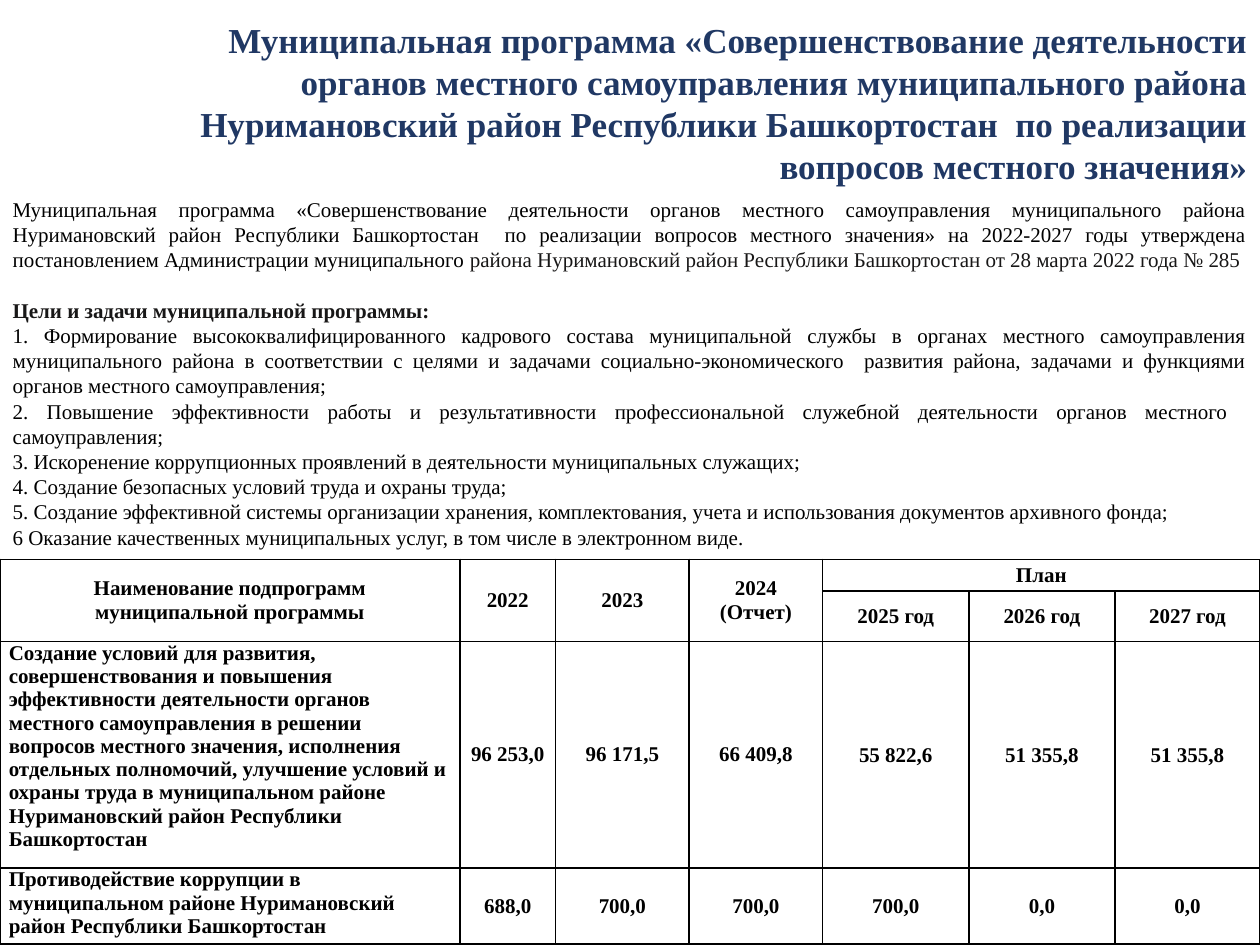
from lxml.etree import SubElement
from pptx import Presentation
from pptx.dml.color import RGBColor
from pptx.enum.text import MSO_ANCHOR as Anchor, MSO_AUTO_SIZE as AutoSize, PP_ALIGN as Align
from pptx.oxml.ns import qn
from pptx.util import Inches, Pt

COLORS = {"title": "203864", "text": "000000", "soft": "181717", "border": "000000"}
FONT = "Times New Roman"


def add_span(para, text, size=12, bold=False, color="text"):
    span = para.add_run()
    span.text = text
    span.font.name = FONT
    span.font.size = Pt(size)
    span.font.bold = bold
    span.font.color.rgb = RGBColor.from_string(COLORS[color])


def add_borders(cell):
    properties = cell._tc.get_or_add_tcPr()
    for side in ("lnL", "lnR", "lnT", "lnB"):
        line = SubElement(properties, qn(f"a:{side}"), w=str(Pt(1)))
        fill = SubElement(line, qn("a:solidFill"))
        SubElement(fill, qn("a:srgbClr"), val=COLORS["border"])


deck = Presentation()
deck.slide_width = Inches(10)
deck.slide_height = Inches(7.5)
page = deck.slides.add_slide(deck.slide_layouts[1])

title = page.shapes.title
body = page.placeholders[1]
for box, left, top, width, height in (
    (title, 1.02, 0.1, 8.98, 1.09),
    (body, 0, 1.51, 10, 2.93),
):
    box.left, box.top = Inches(left), Inches(top)
    box.width, box.height = Inches(width), Inches(height)
    box.text_frame.word_wrap = True
    box.text_frame.auto_size = AutoSize.NONE
    box.text_frame.vertical_anchor = Anchor.TOP

para = title.text_frame.paragraphs[0]
para.alignment = Align.RIGHT
para.line_spacing = 1.0
add_span(
    para,
    "Муниципальная программа «Совершенствование деятельности органов местного "
    "самоуправления муниципального района Нуримановский район Республики "
    "Башкортостан  по реализации вопросов местного значения»",
    20, True, "title",
)

INTRO = [
    ("Муниципальная программа «Совершенствование деятельности органов местного "
     "самоуправления муниципального района Нуримановский район Республики "
     "Башкортостан  по реализации вопросов местного значения» на 2022-2027 годы "
     "утверждена постановлением Администрации муниципального ", False, "text"),
    ("района Нуримановский район Республики Башкортостан от 28 марта 2022 года № 285",
     False, "soft"),
]
HEADING = [("Цели и задачи муниципальной программы:", True, "soft")]
GOALS = [
    "1. Формирование высококвалифицированного кадрового состава муниципальной службы "
    "в органах местного самоуправления муниципального района в соответствии с целями "
    "и задачами социально-экономического  развития района, задачами и функциями "
    "органов местного самоуправления;",
    "2. Повышение эффективности работы и результативности профессиональной служебной "
    "деятельности органов местного  самоуправления;",
    "3. Искоренение коррупционных проявлений в деятельности муниципальных служащих;",
    "4. Создание безопасных условий труда и охраны труда;",
    "5. Создание эффективной системы организации хранения, комплектования, учета "
    "и использования документов архивного фонда;",
    "6 Оказание качественных муниципальных услуг, в том числе в электронном виде.",
]
paragraphs = [INTRO, HEADING] + [[(goal, False, "text")] for goal in GOALS]
for index, spans in enumerate(paragraphs):
    frame = body.text_frame
    para = frame.add_paragraph() if index else frame.paragraphs[0]
    para.alignment = Align.LEFT if spans is HEADING else Align.JUSTIFY
    para.line_spacing = 1.0
    para.space_before = Pt(14.4 if spans is HEADING else 0)
    properties = para._p.get_or_add_pPr()
    properties.set("marL", "0")
    properties.set("indent", "0")
    SubElement(properties, qn("a:buNone"))
    for text, bold, color in spans:
        add_span(para, text, bold=bold, color=color)

ROWS = [
    ["Наименование подпрограмм\nмуниципальной программы", "2022", "2023",
     "2024\n(Отчет)", "План", "", ""],
    ["", "", "", "", "2025 год", "2026 год", "2027 год"],
    ["Создание условий для развития, совершенствования и повышения эффективности "
     "деятельности органов местного самоуправления в решении вопросов местного "
     "значения, исполнения отдельных полномочий, улучшение условий и охраны труда "
     "в муниципальном районе Нуримановский район Республики Башкортостан",
     "96 253,0", "96 171,5", "66 409,8", "55 822,6", "51 355,8", "51 355,8"],
    ["Противодействие коррупции в муниципальном районе Нуримановский район "
     "Республики Башкортостан",
     "688,0", "700,0", "700,0", "700,0", "0,0", "0,0"],
]
WIDTHS = [3.65, 0.76, 1.06, 1.06, 1.16, 1.16, 1.15]
HEIGHTS = [0.25, 0.4, 1.8, 0.6]
HEADER_ROWS = 2
PLAN_COLUMN = 4

table = page.shapes.add_table(
    len(ROWS), len(WIDTHS), Inches(0), Inches(4.44), Inches(10), Inches(sum(HEIGHTS))
).table
table.first_row = False
table.horz_banding = False
for column, width in zip(table.columns, WIDTHS):
    column.width = Inches(width)
for row, height in zip(table.rows, HEIGHTS):
    row.height = Inches(height)

for row_index, values in enumerate(ROWS):
    for column_index, value in enumerate(values):
        cell = table.cell(row_index, column_index)
        is_name = row_index >= HEADER_ROWS and column_index == 0
        is_plan = row_index >= HEADER_ROWS and column_index >= PLAN_COLUMN
        cell.margin_left = cell.margin_right = Inches(0.01 if is_plan else 0.07)
        cell.margin_top = Inches(0.01 if is_plan else 0)
        cell.margin_bottom = Inches(0)
        cell.vertical_anchor = Anchor.TOP if is_name else Anchor.MIDDLE
        add_borders(cell)
        cell.fill.background()
        for line_index, text in enumerate(value.split("\n") if value else []):
            frame = cell.text_frame
            para = frame.add_paragraph() if line_index else frame.paragraphs[0]
            para.alignment = Align.LEFT if is_name else Align.CENTER
            add_span(para, text, bold=True)

for column_index in range(PLAN_COLUMN):
    table.cell(0, column_index).merge(table.cell(1, column_index))
table.cell(0, PLAN_COLUMN).merge(table.cell(0, len(WIDTHS) - 1))

deck.save("out.pptx")
